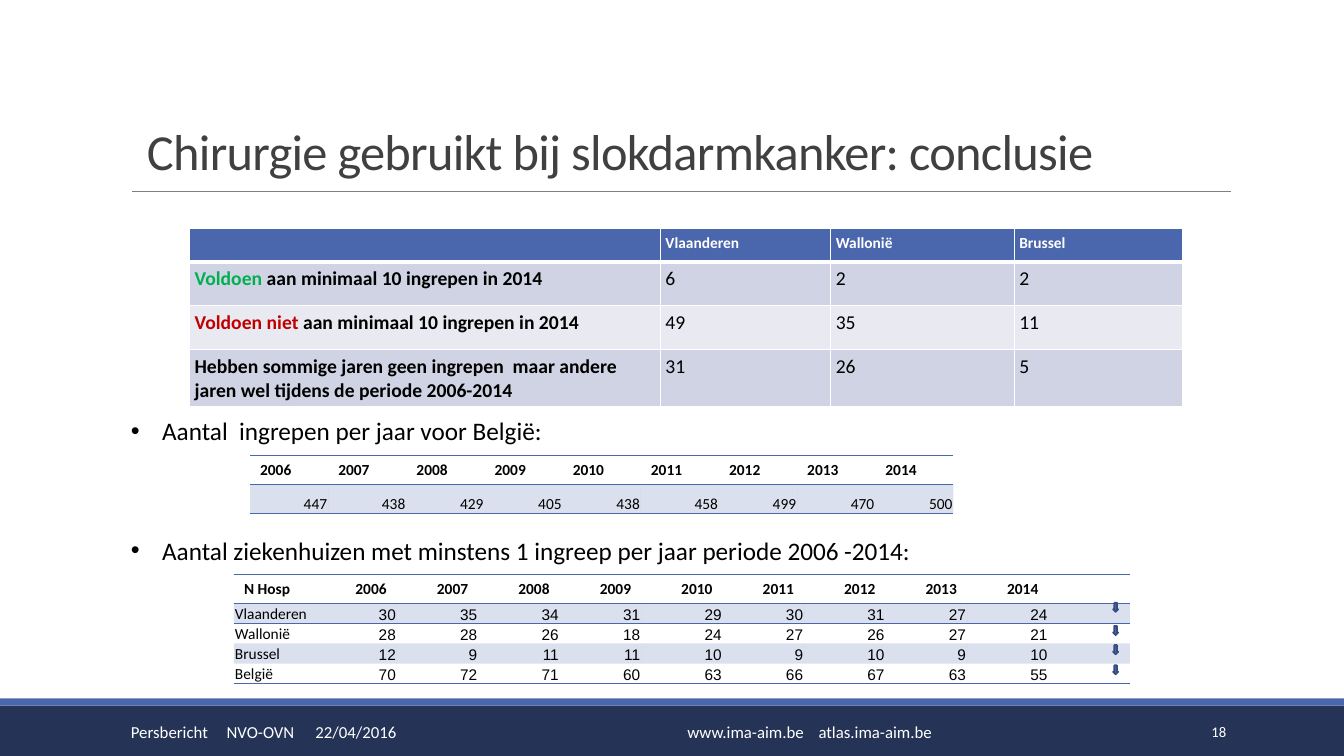
import lxml.etree
import pptx
import pptx.dml.color
import pptx.enum.shapes
import pptx.enum.text
import pptx.oxml.ns
import pptx.util
from dataclasses import dataclass

Inches, Pt = pptx.util.Inches, pptx.util.Pt
Align, Anchor = pptx.enum.text.PP_ALIGN, pptx.enum.text.MSO_ANCHOR
Shape = pptx.enum.shapes.MSO_SHAPE
qn = pptx.oxml.ns.qn


@dataclass(frozen=True)
class Theme:
    font: str = "Calibri"
    number_font: str = "Arial"
    blue: str = "4A66AC"
    navy: str = "253356"
    arrow_edge: str = "374B7F"
    grey: str = "808080"
    title_ink: str = "404040"
    ink: str = "000000"
    white: str = "FFFFFF"
    green: str = "00B050"
    red: str = "C00000"
    band_dark: str = "D0D3E3"
    band_light: str = "E9EAF1"
    band_opacity: int = 20
    title_size: float = 36
    body_size: float = 18
    result_size: float = 14
    footer_size: float = 12
    small_size: float = 11
    page_size: float = 10.5


THEME = Theme()

TITLE = "Chirurgie gebruikt bij slokdarmkanker: conclusie"
BULLETS = ["Aantal  ingrepen per jaar voor België:",
           "Aantal ziekenhuizen met minstens 1 ingreep per jaar periode 2006 -2014:"]
REGIONS = ["", "Vlaanderen", "Wallonië", "Brussel"]
# highlighted words, their colour, rest of the label, values per region
CRITERIA = [
    ("Voldoen ", THEME.green, "aan minimaal 10 ingrepen in 2014", (6, 2, 2)),
    ("Voldoen niet ", THEME.red, "aan minimaal 10 ingrepen in 2014", (49, 35, 11)),
    ("", THEME.ink, "Hebben sommige jaren geen ingrepen  maar andere jaren wel "
     "tijdens de periode 2006-2014", (31, 26, 5)),
]
YEARS = [str(year) for year in range(2006, 2015)]
OPERATIONS = [447, 438, 429, 405, 438, 458, 499, 470, 500]
HOSPITALS = [
    ("Vlaanderen", 30, 35, 34, 31, 29, 30, 31, 27, 24),
    ("Wallonië", 28, 28, 26, 18, 24, 27, 26, 27, 21),
    ("Brussel", 12, 9, 11, 11, 10, 9, 10, 9, 10),
    ("België", 70, 72, 71, 60, 63, 66, 67, 63, 55),
]
ARROW_TOPS = [5.98, 6.21, 6.4, 6.6]
# text, left, width, alignment, size, tab stops
FOOTERS = [
    ("Persbericht\tNVO-OVN\t22/04/2016", 1.2, 4.03, Align.LEFT, THEME.footer_size, (0.95, 1.83)),
    ("www.ima-aim.be\tatlas.ima-aim.be", 6.72, 3.94, Align.LEFT, THEME.footer_size, (1.3,)),
    ("18", 10.83, 1.43, Align.RIGHT, THEME.page_size, ()),
]


def rgb(code):
    return pptx.dml.color.RGBColor.from_string(code)


def style(font, size, color, name=THEME.font, bold=False):
    font.size, font.name, font.bold = Pt(size), name, bold
    font.color.rgb = rgb(color)


def add_shape(page, kind, at, fill, edge=None):
    shape = page.shapes.add_shape(kind, *map(Inches, at))
    shape.shadow.inherit = False
    shape.fill.solid()
    shape.fill.fore_color.rgb = rgb(fill)
    if edge:
        shape.line.color.rgb = rgb(edge)
        shape.line.width = Pt(1.25)
    else:
        shape.line.fill.background()


def add_box(page, at, anchor):
    frame = page.shapes.add_textbox(*map(Inches, at)).text_frame
    frame.word_wrap = True
    frame.vertical_anchor = anchor
    return frame


def add_table(page, left, top, widths, heights):
    """Add a table without built-in style, sized by its columns and rows."""
    sizes = (left, top, sum(widths), sum(heights))
    table = page.shapes.add_table(len(heights), len(widths), *map(Inches, sizes)).table
    table.first_row = table.horz_banding = False
    table._tbl.tblPr.find(qn("a:tableStyleId")).text = "{2D5ABB26-0587-4C30-8999-92F81FD0307C}"
    for column, width in zip(table.columns, widths):
        column.width = Inches(width)
    for row, height in zip(table.rows, heights):
        row.height = Inches(height)
    return table


def set_borders(cell, **edges):
    """Draw edges L, R, T, B, each given as (colour, points)."""
    properties = cell._tc.get_or_add_tcPr()
    for side in "LRTB":
        if side in edges:
            color, width = edges[side]
            line = lxml.etree.SubElement(properties, qn("a:ln" + side), w=str(Pt(width)))
            fill = lxml.etree.SubElement(line, qn("a:solidFill"))
            lxml.etree.SubElement(fill, qn("a:srgbClr"), val=color)


def fill_cell(cell, color, opacity=100):
    cell.fill.solid()
    cell.fill.fore_color.rgb = rgb(color)
    if opacity < 100:
        shade = cell._tc.tcPr.find(qn("a:solidFill")).find(qn("a:srgbClr"))
        lxml.etree.SubElement(shade, qn("a:alpha"), val=str(opacity * 1000))


def set_margins(cell, side, bottom):
    cell.margin_left = cell.margin_right = cell.margin_top = Inches(side)
    cell.margin_bottom = Inches(bottom)


def write_cell(cell, text, size, color, name=THEME.font, bold=False, align=Align.LEFT):
    para = cell.text_frame.paragraphs[0]
    para.alignment = align
    if text:
        para.add_run().text = text
        style(para.font, size, color, name, bold)
    else:
        lxml.etree.SubElement(para._p, qn("a:endParaRPr"), sz=str(int(size * 100)))


def add_criteria_table(page):
    table = add_table(page, 1.88, 2.27, [4.67, 1.69, 1.82, 1.67], [0.33, 0.43, 0.44, 0.56])
    thin, thick = (THEME.white, 1), (THEME.white, 3)
    for row in range(len(CRITERIA) + 1):
        for column in range(len(REGIONS)):
            cell = table.cell(row, column)
            set_margins(cell, 0.05, 0.05)
            set_borders(cell, L=thin, R=thin, T=thick if row == 1 else thin,
                        B=thick if row == 0 else thin)
            band = THEME.band_dark if row % 2 else THEME.band_light
            fill_cell(cell, band if row else THEME.blue)
            if row == 0:
                write_cell(cell, REGIONS[column], THEME.small_size, THEME.white, bold=True)
                continue
            marked, color, rest, values = CRITERIA[row - 1]
            if column:
                write_cell(cell, str(values[column - 1]), THEME.result_size, THEME.ink)
                continue
            para = cell.text_frame.paragraphs[0]
            for text, ink in ((marked, color), (rest, THEME.ink)):
                if text:
                    span = para.add_run()
                    span.text = text
                    style(span.font, THEME.result_size, ink, bold=True)


def add_year_table(page, left, top, width, heights, rows, header_align, number_font):
    """Add a ruled table: bold header row, then rows with every odd one tinted."""
    count = len(rows[0])
    table = add_table(page, left, top, [width / count] * count, heights)
    rule = (THEME.blue, 1)
    for r, values in enumerate(rows):
        for c, value in enumerate(values):
            cell = table.cell(r, c)
            label = not str(value).isdigit()
            edges = {"T": rule} if r < 2 else {}
            if r in (0, len(rows) - 1):
                edges["B"] = rule
            set_borders(cell, **edges)
            if r:
                set_margins(cell, 0.01, 0)
                cell.vertical_anchor = Anchor.BOTTOM
            if r % 2:
                fill_cell(cell, THEME.blue, THEME.band_opacity)
            align = Align.LEFT if label else Align.RIGHT if r else header_align
            name = number_font if r and not label else THEME.font
            write_cell(cell, str(value), THEME.small_size, THEME.ink, name, r == 0, align)


def add_bullets(page):
    frame = add_box(page, (1.2, 4.07, 10.98, 1.61), Anchor.TOP)
    for index, text in enumerate(BULLETS):
        para = frame.add_paragraph() if index else frame.paragraphs[0]
        para.text = text
        if index:
            para.space_before = Pt(64)
        properties = para._p.get_or_add_pPr()
        properties.set("marL", str(Inches(0.31)))
        properties.set("indent", str(-Inches(0.31)))
        lxml.etree.SubElement(properties, qn("a:buFont"), typeface="Arial")
        lxml.etree.SubElement(properties, qn("a:buChar"), char="•")
        style(para.font, THEME.body_size, THEME.ink)


def add_frame(page):
    """Add the title, its rule and the footer bar."""
    add_shape(page, Shape.RECTANGLE, (0, 7, 13.33, 0.5), THEME.navy)
    add_shape(page, Shape.RECTANGLE, (0, 6.93, 13.33, 0.07), THEME.blue)
    rule = page.shapes.add_connector(pptx.enum.shapes.MSO_CONNECTOR.STRAIGHT,
                                     *map(Inches, (1.31, 1.9, 12.21, 1.9)))
    rule.line.color.rgb = rgb(THEME.grey)
    rule.line.width = Pt(0.5)
    lxml.etree.SubElement(rule._element.spPr, qn("a:effectLst"))
    para = add_box(page, (1.36, 0.25, 11, 1.59), Anchor.BOTTOM).paragraphs[0]
    span = para.add_run()
    span.text = TITLE
    para.line_spacing = 0.85
    style(para.font, THEME.title_size, THEME.title_ink)
    span._r.get_or_add_rPr().set("spc", "-50")
    for text, left, width, align, size, stops in FOOTERS:
        para = add_box(page, (left, 7.06, width, 0.4), Anchor.MIDDLE).paragraphs[0]
        para.text = text
        para.alignment = align
        if stops:
            tabs = lxml.etree.SubElement(para._p.get_or_add_pPr(), qn("a:tabLst"))
            for stop in stops:
                lxml.etree.SubElement(tabs, qn("a:tab"), pos=str(Inches(stop)), algn="l")
        style(para.font, size, THEME.white)


def main():
    deck = pptx.Presentation()
    deck.slide_width, deck.slide_height = Inches(13.33), Inches(7.5)
    page = deck.slides.add_slide(deck.slide_layouts[6])
    add_frame(page)
    add_bullets(page)
    add_year_table(page, 2.48, 4.52, 6.98, [0.28, 0.29], [YEARS, OPERATIONS],
                   Align.LEFT, THEME.font)
    hospital_rows = [("N Hosp", *YEARS, "")] + [(*row, "") for row in HOSPITALS]
    add_year_table(page, 2.32, 5.7, 8.89, [0.28] + [0.2] * len(HOSPITALS), hospital_rows,
                   Align.RIGHT, THEME.number_font)
    for top in ARROW_TOPS:
        add_shape(page, Shape.DOWN_ARROW, (11.04, top, 0.05, 0.09), THEME.blue, THEME.arrow_edge)
    add_criteria_table(page)
    deck.save("out.pptx")


if __name__ == "__main__":
    main()
